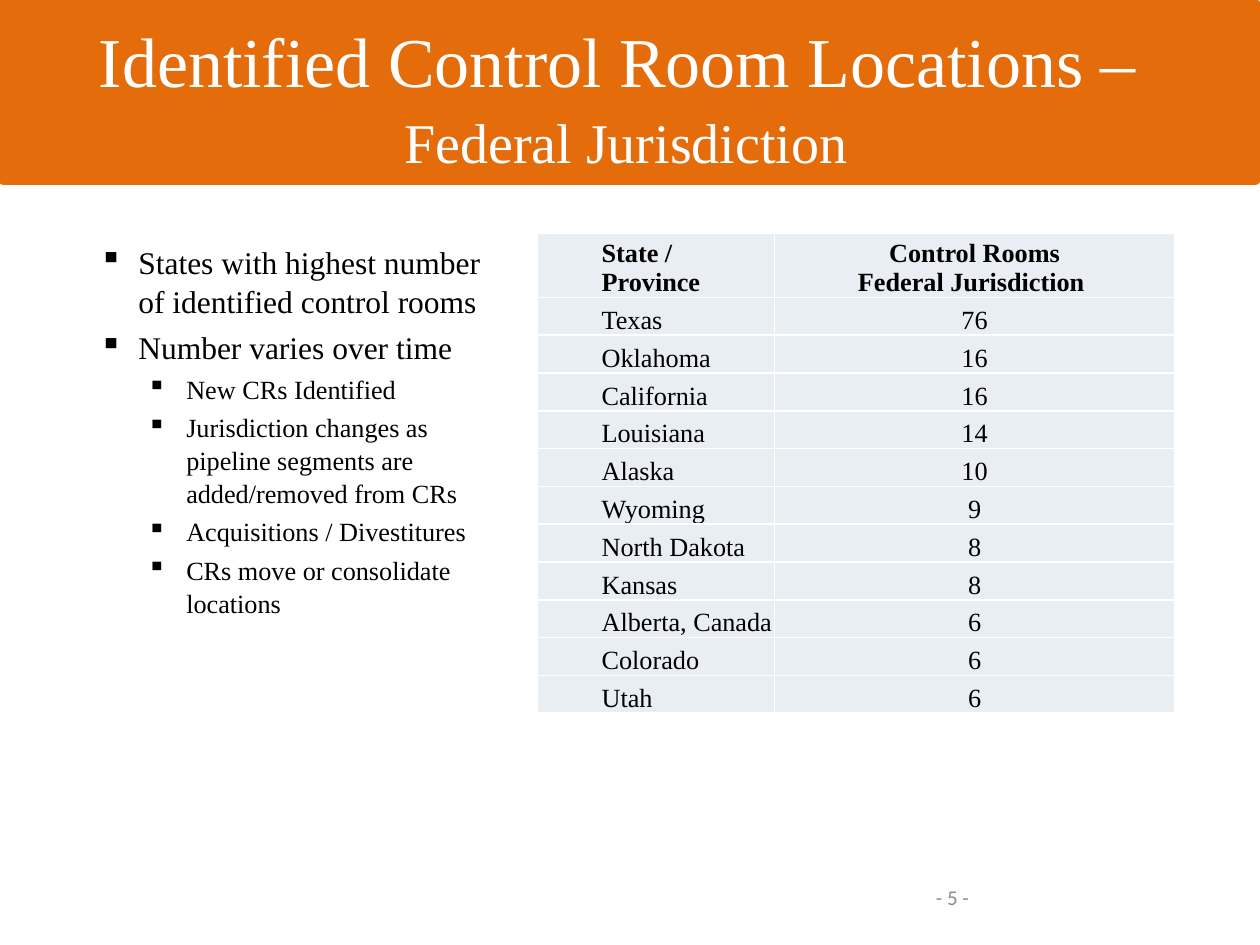
from lxml import etree
from pptx import Presentation
from pptx.dml.color import RGBColor
from pptx.enum.shapes import MSO_SHAPE as SHAPE
from pptx.enum.text import MSO_ANCHOR as ANCHOR, PP_ALIGN as ALIGN
from pptx.oxml.ns import qn
from pptx.util import Inches, Pt

WIDTH, HEIGHT = 10, 7.5
SERIF = "Times New Roman"
ORANGE, WHITE, BLACK, GREY, PALE = "E46C0A", "FFFFFF", "000000", "8C8C8C", "E9EDF4"

BULLETS = [
    (0, "States with highest number of identified control rooms"),
    (0, "Number varies over time"),
    (1, "New CRs Identified"),
    (1, "Jurisdiction changes as pipeline segments are added/removed from CRs"),
    (1, "Acquisitions / Divestitures"),
    (1, "CRs move or consolidate locations"),
]
LEVELS = [(0.31, 18), (0.69, 15)]  # indent in inches, text size

HEADER = ("State / Province", "Control Rooms\nFederal Jurisdiction ")
CONTROL_ROOMS = [
    ("Texas", 76), ("Oklahoma", 16), ("California", 16), ("Louisiana", 14),
    ("Alaska", 10), ("Wyoming", 9), ("North Dakota", 8), ("Kansas", 8),
    ("Alberta, Canada", 6), ("Colorado", 6), ("Utah", 6),
]


def color(value):
    return RGBColor.from_string(value)


def across(percent):
    return Inches(WIDTH * percent / 100)


def down(percent):
    return Inches(HEIGHT * percent / 100)


def area(left, top, width, height):
    """Turn percentages of the slide into a position and size."""
    return across(left), down(top), across(width), down(height)


def add_run(p, text, size, hue=BLACK, font=SERIF, bold=False):
    r = p.add_run()
    r.text = text
    r.font.size, r.font.name, r.font.bold = Pt(size), font, bold
    r.font.color.rgb = color(hue)


def add_text_box(s, place):
    tf = s.shapes.add_textbox(*place).text_frame
    tf.word_wrap = True
    return tf


def add_band(s, place):
    sp = s.shapes.add_shape(SHAPE.RECTANGLE, *place)
    sp.shadow.inherit = False
    sp.fill.solid()
    sp.fill.fore_color.rgb = color(ORANGE)
    sp.line.color.rgb = color(ORANGE)
    sp.line.width = Pt(6.75)


def add_title(s, place):
    p = add_text_box(s, place).paragraphs[0]
    p.alignment = ALIGN.CENTER
    p.line_spacing = 1.08
    add_run(p, "Identified Control Room Locations – ", 40, WHITE)
    p.add_line_break()
    add_run(p, "Federal Jurisdiction", 32, WHITE)


def add_bullets(s, place):
    tf = add_text_box(s, place)
    tf.margin_top, tf.margin_right = Inches(0.06), Inches(0.05)
    for i, (level, text) in enumerate(BULLETS):
        p = tf.add_paragraph() if i else tf.paragraphs[0]
        indent, size = LEVELS[level]
        p.level = level
        p.line_spacing = 1.05
        p.space_before = Pt(0.2 * size if i else 0)
        pPr = p._p.get_or_add_pPr()
        pPr.set("marL", str(Inches(indent)))
        pPr.set("indent", str(-Inches(0.31)))
        etree.SubElement(pPr, qn("a:buChar"), char="▪")
        add_run(p, text, size)


def add_borders(cell):
    tcPr = cell._tc.get_or_add_tcPr()
    for side in ("a:lnL", "a:lnR", "a:lnT", "a:lnB"):
        ln = etree.SubElement(tcPr, qn(side), w=str(Pt(1)))
        fill = etree.SubElement(ln, qn("a:solidFill"))
        etree.SubElement(fill, qn("a:srgbClr"), val=WHITE)


def fill_cell(cell, text, is_state, bold):
    add_borders(cell)
    cell.fill.solid()
    cell.fill.fore_color.rgb = color(PALE)
    cell.vertical_anchor = ANCHOR.BOTTOM
    cell.margin_left = cell.margin_right = cell.margin_top = Inches(0.01)
    cell.margin_bottom = 0
    tf = cell.text_frame
    for i, line in enumerate(text.split("\n")):
        p = tf.add_paragraph() if i else tf.paragraphs[0]
        if is_state:
            p.level = 1
            p._p.get_or_add_pPr().set("marL", str(Inches(0.5)))
        else:
            p.alignment = ALIGN.CENTER
        add_run(p, line, 15, bold=bold)


def add_state_table(s, place):
    rows = [HEADER, *CONTROL_ROOMS]
    table = s.shapes.add_table(len(rows), 2, *place).table
    table.first_row = table.horz_banding = False
    for column, width in zip(table.columns, (18.8, 31.8)):
        column.width = across(width)
    for i, values in enumerate(rows):
        table.rows[i].height = down(4 if i else 6.8)
        for j, value in enumerate(values):
            fill_cell(table.cell(i, j), str(value), is_state=j == 0, bold=i == 0)


def add_slide_number(s, place):
    tf = add_text_box(s, place)
    tf.vertical_anchor = ANCHOR.MIDDLE
    add_run(tf.paragraphs[0], "- 5 -", 12, GREY, "Calibri")


def main():
    prs = Presentation()
    prs.slide_width, prs.slide_height = Inches(WIDTH), Inches(HEIGHT)
    s = prs.slides.add_slide(prs.slide_layouts[6])

    # Heading
    add_band(s, area(0.3, 0.53, 99.3, 18.4))
    add_title(s, area(-0.3, 0.53, 100, 19.47))

    # Body: notes on the left, counts on the right
    add_bullets(s, area(6.9, 24.67, 32.3, 50.8))
    add_state_table(s, area(42.65, 24.67, 50.6, 50.8))

    # Footer
    add_slide_number(s, area(73.3, 92.27, 23.3, 5.33))
    prs.save("out.pptx")


if __name__ == "__main__":
    main()
